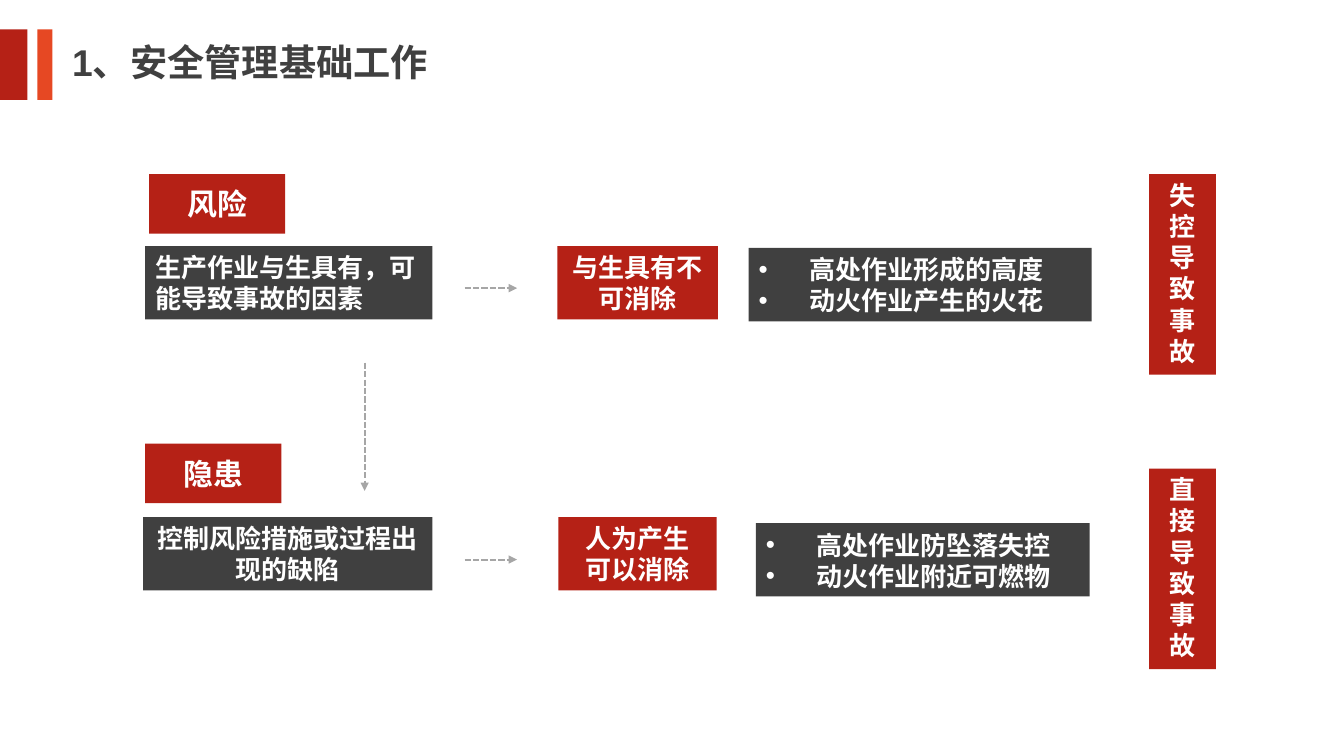
import pptx
import pptx.util
import pptx.dml.color
import pptx.enum.dml
import pptx.enum.shapes
import pptx.enum.text
import pptx.oxml
import pptx.oxml.ns

Cm, Pt = pptx.util.Cm, pptx.util.Pt
rgb = pptx.dml.color.RGBColor.from_string
qn = pptx.oxml.ns.qn
LEFT, CENTER = pptx.enum.text.PP_ALIGN.LEFT, pptx.enum.text.PP_ALIGN.CENTER
TOP = pptx.enum.text.MSO_ANCHOR.TOP
MIDDLE = pptx.enum.text.MSO_ANCHOR.MIDDLE
BOTTOM = pptx.enum.text.MSO_ANCHOR.BOTTOM
GROW = pptx.enum.text.MSO_AUTO_SIZE.SHAPE_TO_FIT_TEXT
FIXED = pptx.enum.text.MSO_AUTO_SIZE.NONE
COLORS = {"red": "B52116", "orange": "E64823", "dark": "404040",
          "gray": "A6A6A6", "white": "FFFFFF"}

prs = pptx.Presentation()
prs.slide_width, prs.slide_height = Cm(33.87), Cm(19.05)
s = prs.slides.add_slide(prs.slide_layouts[6])


def add_box(left, top, width, height, color):
    sp = s.shapes.add_shape(pptx.enum.shapes.MSO_SHAPE.RECTANGLE,
                            Cm(left), Cm(top), Cm(width), Cm(height))
    sp.shadow.inherit = False
    sp.fill.solid()
    sp.fill.fore_color.rgb = rgb(COLORS[color])
    sp.line.fill.background()
    return sp


def add_text(sp, lines, size, color, align, anchor, auto_size, bullets=False):
    tf = sp.text_frame
    tf.word_wrap = True
    tf.auto_size = auto_size
    tf.vertical_anchor = anchor
    for i, line in enumerate(lines):
        p = tf.add_paragraph() if i else tf.paragraphs[0]
        p.alignment = align
        r = p.add_run()
        r.text = line
        r.font.name = "Arial"
        r.font.size = Pt(size)
        r.font.bold = True
        r.font.color.rgb = rgb(COLORS[color])
        if bullets:
            pPr = p._p.get_or_add_pPr()
            pPr.set("marL", str(Cm(1.27)))
            pPr.set("indent", str(-Cm(1.27)))
            pptx.oxml.ns  # bullet font and character follow
            for tag, key, value in (("a:buFont", "typeface", "Arial"),
                                    ("a:buChar", "char", "•")):
                pPr.append(pPr.makeelement(qn(tag), {key: value}))


# Header bars and title
add_box(0, 0.74, 0.69, 1.78, "red")
add_box(0.94, 0.74, 0.38, 1.78, "orange")
title = s.shapes.add_textbox(Cm(1.57), Cm(0.86), Cm(9.63), Cm(1.4))
add_text(title, ["1、安全管理基础工作"], 26.6, "dark", LEFT, TOP, GROW)

# Risk and hazard labels
for left, top, label in ((3.76, 4.39, "风险"), (3.66, 11.18, "隐患")):
    sp = add_box(left, top, 3.43, 1.5, "red")
    add_text(sp, [label], 21.4, "white", CENTER, MIDDLE, FIXED)

# Definitions, nature and outcomes
statements = (
    (3.66, 6.2, 7.24, 1.85, "dark", LEFT, ["生产作业与生具有，可能导致事故的因素"]),
    (14.05, 6.2, 4.04, 1.85, "red", CENTER, ["与生具有不可消除"]),
    (3.61, 13.03, 7.29, 1.85, "dark", CENTER, ["控制风险措施或过程出现的缺陷"]),
    (14.07, 13.03, 3.99, 1.85, "red", CENTER, ["人为产生", "可以消除"]),
    (28.96, 4.39, 1.68, 5.05, "red", CENTER, ["失控导致事故"]),
    (28.96, 11.81, 1.68, 5.05, "red", CENTER, ["直接导致事故"]),
)
for left, top, width, height, color, align, lines in statements:
    sp = add_box(left, top, width, height, color)
    add_text(sp, lines, 18.6, "white", align, TOP, GROW)

# Bulleted examples
examples = (
    (18.87, 6.25, 8.64, MIDDLE, ["高处作业形成的高度", "动火作业产生的火花"]),
    (19.05, 13.18, 8.41, BOTTOM, ["高处作业防坠落失控", "动火作业附近可燃物"]),
)
for left, top, width, anchor, lines in examples:
    sp = add_box(left, top, width, 1.85, "dark")
    add_text(sp, lines, 18.6, "white", LEFT, anchor, GROW, bullets=True)

# Dashed arrows
for x1, y1, x2, y2 in ((9.19, 9.14, 9.19, 12.37),
                       (11.71, 7.26, 13.03, 7.26),
                       (11.71, 14.1, 13.03, 14.1)):
    c = s.shapes.add_connector(pptx.enum.shapes.MSO_CONNECTOR.STRAIGHT,
                               Cm(x1), Cm(y1), Cm(x2), Cm(y2))
    c.line.color.rgb = rgb(COLORS["gray"])
    c.line.width = Pt(1.5)
    c.line.dash_style = pptx.enum.dml.MSO_LINE.SQUARE_DOT
    ln = c.line._get_or_add_ln()
    ln.append(ln.makeelement(qn("a:tailEnd"), {"type": "triangle"}))
    spPr = c._element.spPr
    spPr.append(spPr.makeelement(qn("a:effectLst"), {}))

prs.save("out.pptx")
